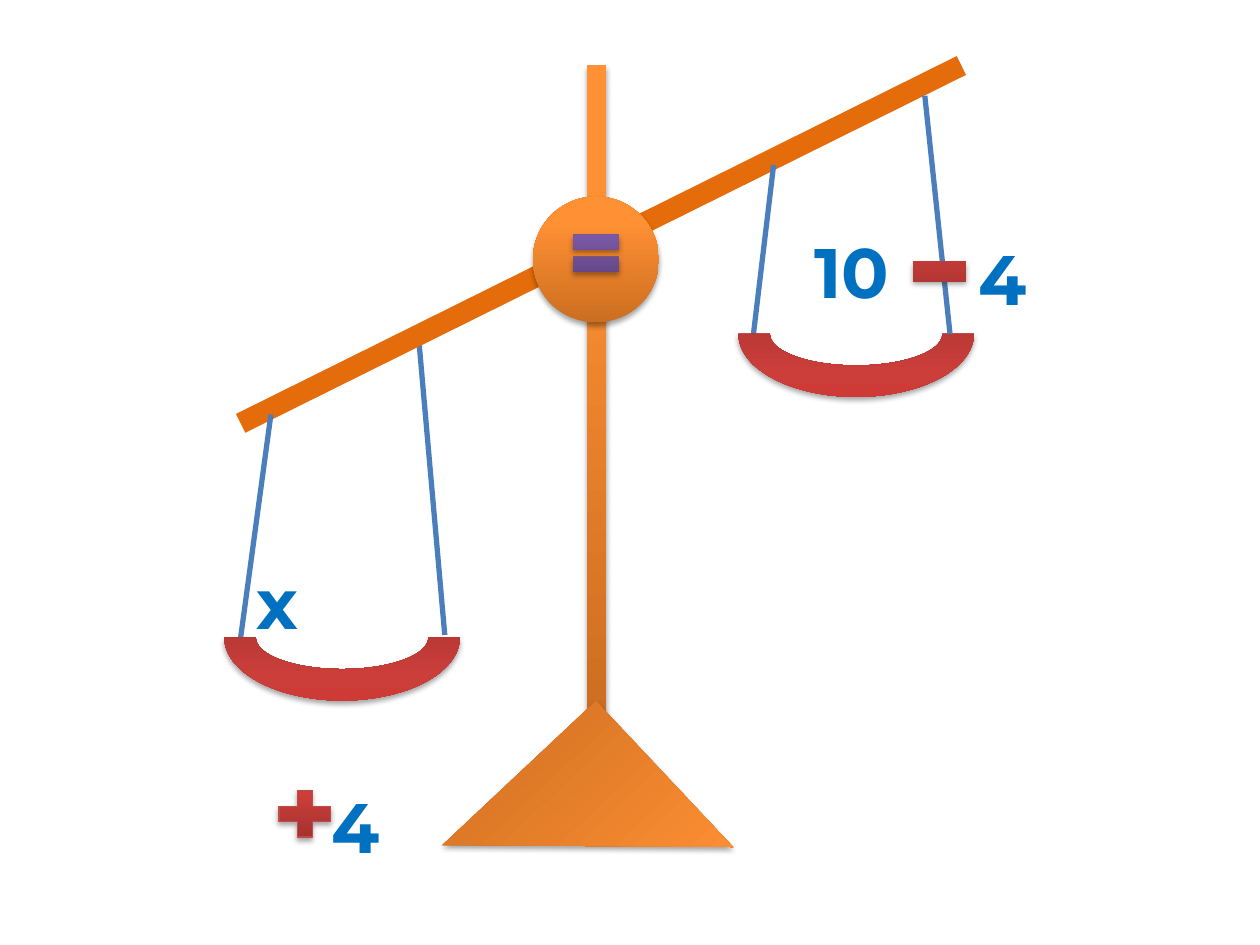
from dataclasses import dataclass

from lxml.etree import SubElement
from pptx import Presentation
from pptx.dml.color import RGBColor
from pptx.enum.shapes import MSO_CONNECTOR, MSO_SHAPE
from pptx.enum.text import MSO_ANCHOR, PP_ALIGN
from pptx.oxml.ns import qn
from pptx.util import Inches, Pt


@dataclass(frozen=True)
class Theme:
    """Colours, gradients, type and line widths of the scale."""
    orange: tuple = ("CC6E20", "FF9034", "FF9136")
    red: tuple = ("9C2F2D", "CB3E3A", "CE3B37")
    purple: tuple = ("5F4480", "7B58A6", "7C57A8")
    beam: str = "E46C0A"
    rope: str = "4B7EBC"
    plus_outline: str = "BF4C48"
    paper: str = "FFFFFF"
    number: str = "0070C0"
    font: str = "Montserrat"
    number_size: int = 40
    beam_width: float = 12
    rope_width: float = 3
    outline_width: float = 0.75


class ScaleSlide:
    """Draws on a slide measured as 100 columns by 75 rows."""

    def __init__(self, presentation, theme):
        self.theme = theme
        self.slide = presentation.slides.add_slide(presentation.slide_layouts[6])
        self.column = presentation.slide_width / 100
        self.row = presentation.slide_height / 75

    def place(self, column, row):
        """Turn columns and rows into slide lengths."""
        return round(column * self.column), round(row * self.row)

    def bar(self, start, end, color, width):
        """Draw a straight bar or rope between two grid points."""
        line = self.slide.shapes.add_connector(
            MSO_CONNECTOR.STRAIGHT, *self.place(*start), *self.place(*end))
        line.line.color.rgb = RGBColor.from_string(color)
        line.line.width = Pt(width)
        SubElement(line._element.spPr, qn("a:effectLst"))

    def rope(self, start, end):
        """Hang a pan rope between two grid points."""
        self.bar(start, end, self.theme.rope, self.theme.rope_width)

    def shape(self, kind, position, size):
        """Add a preset shape without line or inherited shadow."""
        shape = self.slide.shapes.add_shape(
            kind, *self.place(*position), *self.place(*size))
        shape.shadow.inherit = False
        shape.line.fill.background()
        return shape

    def number(self, text, column, row):
        """Add a square tile with a centred number."""
        tile = self.shape(MSO_SHAPE.RECTANGLE, (column, row), (10, 10))
        tile.fill.solid()
        tile.fill.fore_color.rgb = RGBColor.from_string(self.theme.paper)
        tile.text_frame.vertical_anchor = MSO_ANCHOR.MIDDLE
        paragraph = tile.text_frame.paragraphs[0]
        paragraph.text = text
        paragraph.alignment = PP_ALIGN.CENTER
        font = paragraph.font
        font.name, font.size, font.bold = self.theme.font, Pt(self.theme.number_size), True
        font.color.rgb = RGBColor.from_string(self.theme.number)

    def solid_part(self, kind, position, size, colors, rotation=0, outline=None):
        """Add a part with a vertical gradient and a soft drop shadow."""
        part = self.shape(kind, position, size)
        part.rotation = rotation
        part.fill.gradient()
        part.fill.gradient_angle = 90
        properties = part._element.spPr
        stops = properties.find(".//" + qn("a:gsLst"))
        stops.clear()
        for percent, color in zip((0, 80, 100), colors):
            stop = SubElement(stops, qn("a:gs"), pos=str(percent * 1000))
            SubElement(stop, qn("a:srgbClr"), val=color)
        shadow = SubElement(
            properties.find(qn("a:effectLst")), qn("a:outerShdw"),
            blurRad=str(Pt(3.1)), dist=str(Pt(1.8)), dir="5400000", rotWithShape="0")
        shade = SubElement(shadow, qn("a:srgbClr"), val="000000")
        SubElement(shade, qn("a:alpha"), val="35000")
        if outline:
            part.line.color.rgb = RGBColor.from_string(outline)
            part.line.width = Pt(self.theme.outline_width)

    def pan(self, column, row):
        """Add a weighing pan, an arc turned upside down."""
        self.solid_part(MSO_SHAPE.BLOCK_ARC, (column, row), (18.7, 10),
                        self.theme.red, rotation=180)


def main():
    """Build the tilted balance and save it."""
    presentation = Presentation()
    presentation.slide_width, presentation.slide_height = Inches(10), Inches(7.5)
    theme = Theme()
    scale = ScaleSlide(presentation, theme)

    scale.rope((33.2, 26.5), (35.3, 50.4))
    scale.number("4", 74.6, 17)
    scale.bar((76.3, 5.2), (19.1, 33.6), theme.beam, theme.beam_width)
    scale.number("x", 17, 42.7)
    scale.number("10", 62.6, 16.5)
    scale.number("4", 23.2, 60.5)
    scale.rope((61.4, 13.1), (59.8, 26.5))
    scale.rope((21.5, 32.9), (19.1, 50.6))

    scale.solid_part(MSO_SHAPE.RECTANGLE, (46.6, 5.2), (1.5, 52), theme.orange)
    scale.solid_part(MSO_SHAPE.RIGHT_TRIANGLE, (38.3, 59.2), (16.7, 15.9),
                     theme.orange, rotation=136.8)
    scale.solid_part(MSO_SHAPE.OVAL, (42.3, 15.6), (10, 10), theme.orange)
    scale.pan(17.8, 45.6)
    scale.pan(58.6, 21.5)
    scale.rope((73.4, 7.6), (75.4, 26.5))

    scale.solid_part(MSO_SHAPE.MATH_PLUS, (21.4, 62.1), (5.6, 5), theme.red,
                     outline=theme.plus_outline)
    scale.solid_part(MSO_SHAPE.MATH_EQUAL, (44.8, 17.6), (5, 5), theme.purple)
    scale.solid_part(MSO_SHAPE.MATH_MINUS, (71.7, 18.3), (5.7, 6.5), theme.red)

    presentation.save("out.pptx")


if __name__ == "__main__":
    main()
